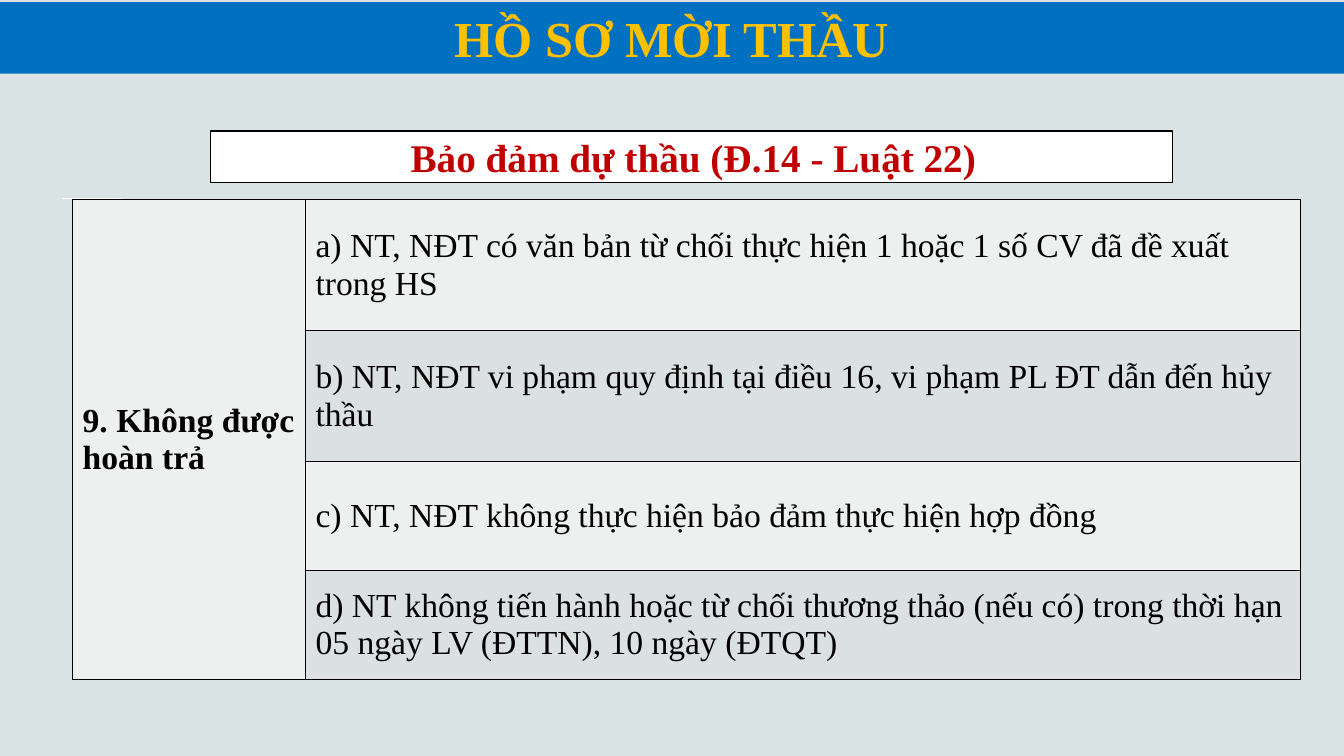
from lxml import etree
from pptx import Presentation
from pptx.dml.color import RGBColor
from pptx.enum.shapes import MSO_CONNECTOR, MSO_SHAPE
from pptx.enum.text import MSO_ANCHOR, PP_ALIGN
from pptx.oxml.ns import qn
from pptx.util import Inches, Pt

STRAIGHT = MSO_CONNECTOR.STRAIGHT
RECTANGLE = MSO_SHAPE.RECTANGLE
MIDDLE = MSO_ANCHOR.MIDDLE
LEFT, CENTER = PP_ALIGN.LEFT, PP_ALIGN.CENTER

COLORS = {
    "background": "DAE3E3",
    "banner": "0070C0",
    "gold": "FFC000",
    "red": "C00000",
    "black": "000000",
    "white": "FFFFFF",
    "light row": "EEF0F0",
    "dark row": "DBE0E0",
}
HEADING = "9. Không được hoàn trả"
CASES = [
    "a) NT, NĐT có văn bản từ chối thực hiện 1 hoặc 1 số CV đã đề xuất trong HS",
    "b) NT, NĐT vi phạm quy định tại điều 16, vi phạm PL ĐT dẫn đến hủy thầu",
    "c) NT, NĐT không thực hiện bảo đảm thực hiện hợp đồng",
    "d) NT không tiến hành hoặc từ chối thương thảo (nếu có) trong thời hạn "
    "05 ngày LV (ĐTTN), 10 ngày (ĐTQT)",
]
COLUMN_WIDTHS = [2.31, 9.87]
ROW_HEIGHTS = [1.3, 1.3, 1.08, 1.08]


def color(name):
    """Return the named palette colour."""
    return RGBColor.from_string(COLORS[name])


class SlideBuilder:
    """Draws styled elements on one slide."""

    font_name = "Times New Roman"

    def __init__(self, slide):
        """Keep the slide and paint its background."""
        self.slide = slide
        fill = slide.background.fill
        fill.solid()
        fill.fore_color.rgb = color("background")

    def add_text(self, frame, text, size, text_color, bold=True, align=CENTER):
        """Add one formatted paragraph of text."""
        frame.word_wrap = True
        paragraph = frame.paragraphs[0]
        paragraph.alignment = align
        run = paragraph.add_run()
        run.text = text
        format_values = {"name": self.font_name, "size": Pt(size), "bold": bold}
        for attribute, value in format_values.items():
            setattr(run.font, attribute, value)
        run.font.color.rgb = color(text_color)

    def line(self, start, end, line_color, width):
        """Draw a straight line without shadow."""
        points = [Inches(value) for value in (*start, *end)]
        connector = self.slide.shapes.add_connector(STRAIGHT, *points)
        connector.line.color.rgb = color(line_color)
        connector.line.width = Pt(width)
        properties = connector._element.find(qn("p:spPr"))
        etree.SubElement(properties, qn("a:effectLst"))

    def rectangle(self, box, fill_color, line_color=None, width=0.85):
        """Draw a filled rectangle and return it."""
        shape = self.slide.shapes.add_shape(RECTANGLE, *map(Inches, box))
        shape.shadow.inherit = False
        shape.fill.solid()
        shape.fill.fore_color.rgb = color(fill_color)
        if line_color:
            shape.line.color.rgb = color(line_color)
            shape.line.width = Pt(width)
        else:
            shape.line.fill.background()
        return shape

    def text_box(self, box, text, size, text_color):
        """Add a text box with one centred paragraph."""
        shape = self.slide.shapes.add_textbox(*map(Inches, box))
        self.add_text(shape.text_frame, text, size, text_color)

    def style_cell(self, cell, fill_color):
        """Give a cell its borders, fill and anchor."""
        properties = cell._tc.get_or_add_tcPr()
        for side in ("lnL", "lnR", "lnT", "lnB"):
            border = etree.SubElement(properties, qn(f"a:{side}"), w=str(Pt(1)))
            solid = etree.SubElement(border, qn("a:solidFill"))
            etree.SubElement(solid, qn("a:srgbClr"), val=COLORS["black"])
        cell.fill.solid()
        cell.fill.fore_color.rgb = color(fill_color)
        cell.vertical_anchor = MIDDLE

    def case_table(self, left, top, heading, cases, size):
        """Add the cases beside one merged heading cell."""
        box = (left, top, sum(COLUMN_WIDTHS), sum(ROW_HEIGHTS))
        table = self.slide.shapes.add_table(len(cases), 2, *map(Inches, box)).table
        for column, width in zip(table.columns, COLUMN_WIDTHS):
            column.width = Inches(width)
        for index, (case, height) in enumerate(zip(cases, ROW_HEIGHTS)):
            table.rows[index].height = Inches(height)
            band = "dark row" if index % 2 else "light row"
            self.style_cell(table.cell(index, 0), "light row")
            self.style_cell(table.cell(index, 1), band)
            self.add_text(table.cell(index, 1).text_frame, case, size, "black", False, LEFT)
        heading_cell = table.cell(0, 0)
        heading_cell.merge(table.cell(len(cases) - 1, 0))
        self.add_text(heading_cell.text_frame, heading, size, "black", True, LEFT)


def main():
    """Build and save the presentation."""
    presentation = Presentation()
    presentation.slide_width = Inches(13.33)
    presentation.slide_height = Inches(7.5)
    builder = SlideBuilder(presentation.slides.add_slide(presentation.slide_layouts[6]))
    builder.line((0.62, 1.97), (1.21, 1.97), "white", 1)
    builder.rectangle((2.09, 1.3, 9.54, 0.51), "white", "black")
    builder.text_box((2, 1.27, 9.75, 0.57), "Bảo đảm dự thầu (Đ.14 - Luật 22)", 28, "red")
    builder.case_table(0.72, 1.98, HEADING, CASES, 24)
    banner = builder.rectangle((0, 0.02, 13.33, 0.71), "banner")
    builder.add_text(banner.text_frame, "HỒ SƠ MỜI THẦU", 36, "gold")
    presentation.save("out.pptx")


if __name__ == "__main__":
    main()
